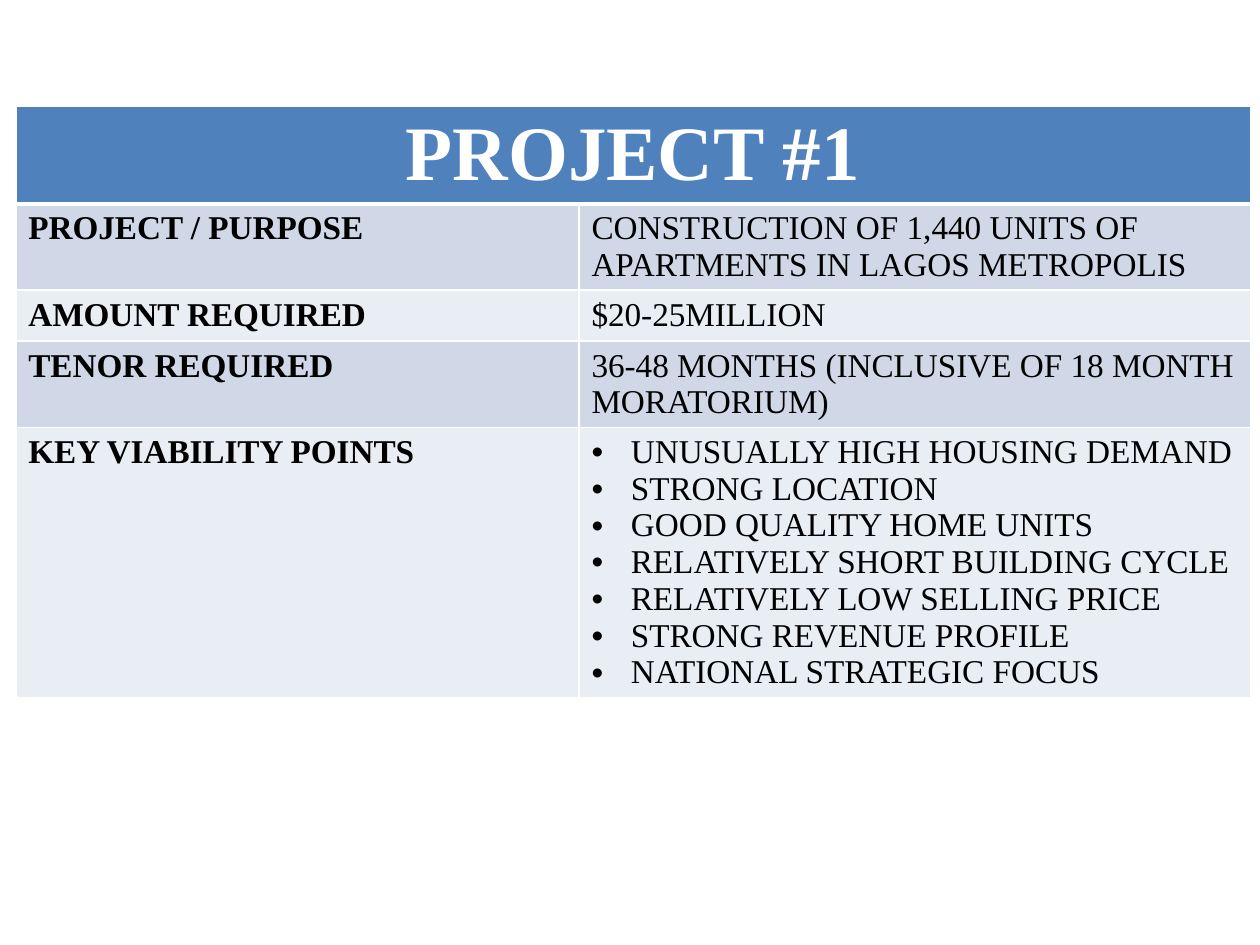
"""Build a one-table slide that sums up a housing project."""
from lxml.etree import SubElement
from pptx import Presentation
from pptx.dml.color import RGBColor
from pptx.enum.text import PP_ALIGN
from pptx.oxml.ns import qn
from pptx.util import Pt

TITLE = "PROJECT #1"
ROWS = [
    ("PROJECT / PURPOSE",
     ["CONSTRUCTION OF 1,440 UNITS OF APARTMENTS IN LAGOS METROPOLIS"]),
    ("AMOUNT REQUIRED", ["$20-25MILLION"]),
    ("TENOR REQUIRED", ["36-48 MONTHS (INCLUSIVE OF 18 MONTH MORATORIUM)"]),
    ("KEY VIABILITY POINTS", [
        "UNUSUALLY HIGH HOUSING DEMAND",
        "STRONG LOCATION",
        "GOOD QUALITY HOME UNITS",
        "RELATIVELY SHORT BUILDING CYCLE",
        "RELATIVELY LOW SELLING PRICE",
        "STRONG REVENUE PROFILE",
        "NATIONAL STRATEGIC FOCUS",
    ]),
]
FONT = "Times New Roman"
BLUE, WHITE, BLACK = "4F81BD", "FFFFFF", "000000"
BANDS = ["D0D8E8", "E9EDF4"]
LEFT, TOP = 9, 60.5
WIDTHS = [321.8, 383.8]
HEIGHTS = [56, 49.3, 29.2, 49.3, 154.6]
INDENT = 22.5


def color(code):
    return RGBColor.from_string(code)


def write(cell, lines, size=19, tint=BLACK, bold=False, align=PP_ALIGN.LEFT):
    frame = cell.text_frame
    for i, line in enumerate(lines):
        para = frame.paragraphs[0] if i == 0 else frame.add_paragraph()
        para.alignment = align
        run = para.add_run()
        run.text = line
        font = run.font
        font.name, font.size, font.bold = FONT, Pt(size), bold
        font.color.rgb = color(tint)
        if len(lines) > 1:
            props = para._p.get_or_add_pPr()
            props.set("marL", str(Pt(INDENT)))
            props.set("indent", str(-Pt(INDENT)))
            SubElement(props, qn("a:buFont"), typeface="Arial")
            SubElement(props, qn("a:buChar"), char="•")


def paint(cell, fill, base=1):
    props = cell._tc.get_or_add_tcPr()
    for side, width in zip("LRTB", (1, 1, 1, base)):
        line = SubElement(props, qn(f"a:ln{side}"), w=str(Pt(width)))
        solid = SubElement(line, qn("a:solidFill"))
        SubElement(solid, qn("a:srgbClr"), val=WHITE)
    cell.fill.solid()
    cell.fill.fore_color.rgb = color(fill)


def main():
    deck = Presentation()
    deck.slide_width, deck.slide_height = Pt(720), Pt(540)
    slide = deck.slides.add_slide(deck.slide_layouts[6])
    table = slide.shapes.add_table(
        len(HEIGHTS), len(WIDTHS), Pt(LEFT), Pt(TOP),
        Pt(sum(WIDTHS)), Pt(sum(HEIGHTS))).table
    for col, width in zip(table.columns, WIDTHS):
        col.width = Pt(width)
    for row, height in zip(table.rows, HEIGHTS):
        row.height = Pt(height)

    head = table.cell(0, 0)
    head.merge(table.cell(0, 1))
    write(head, [TITLE], size=44, tint=WHITE, bold=True,
          align=PP_ALIGN.CENTER)
    for cell in table.rows[0].cells:
        paint(cell, BLUE, base=3)

    for i, (label, lines) in enumerate(ROWS):
        name, value = table.rows[i + 1].cells
        write(name, [label], bold=True)
        write(value, lines)
        for cell in (name, value):
            paint(cell, BANDS[i % 2])
    deck.save("out.pptx")


if __name__ == "__main__":
    main()
